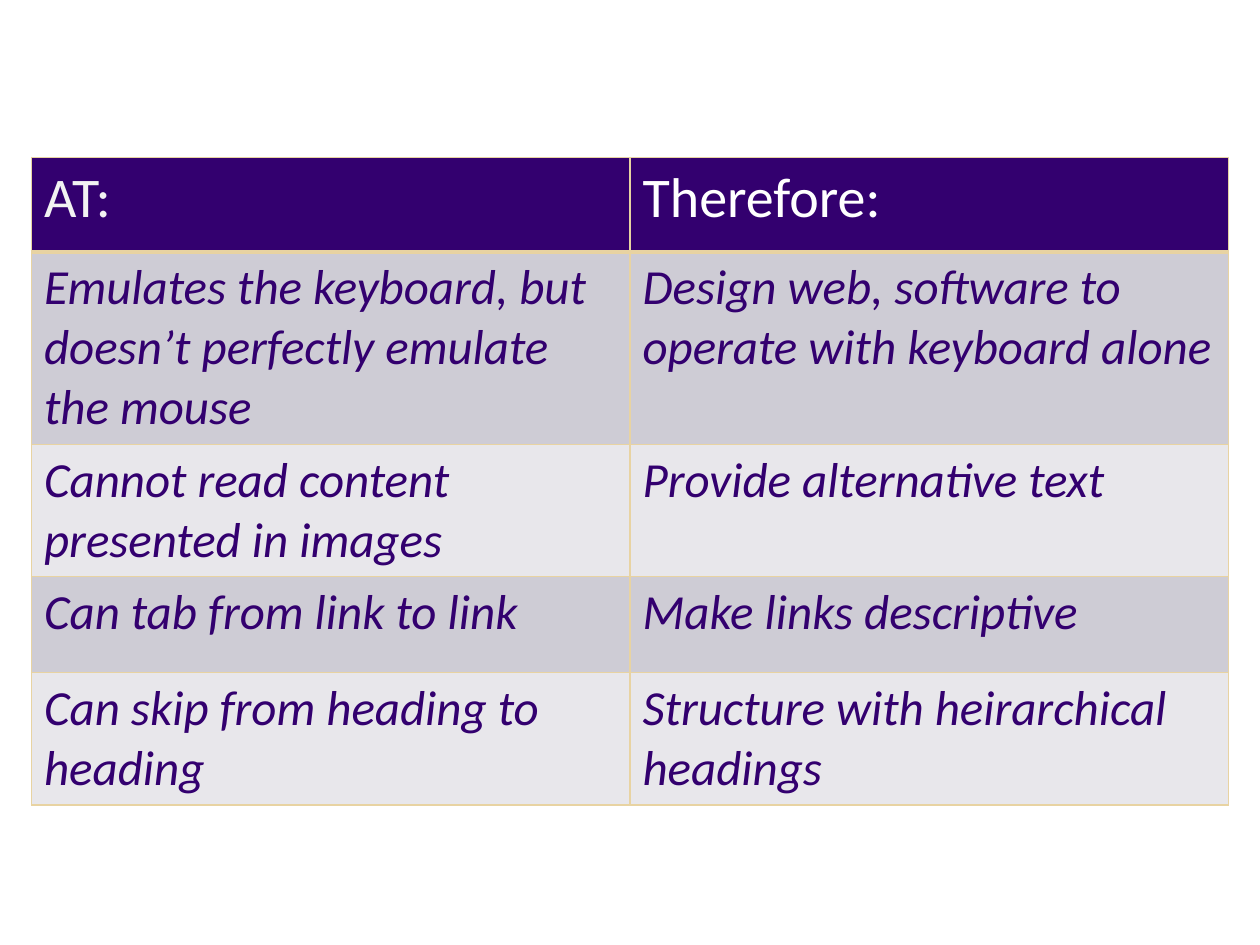
from lxml import etree
from pptx import Presentation
from pptx.dml.color import RGBColor
from pptx.oxml.ns import qn
from pptx.util import Inches, Pt

PURPLE = RGBColor(0x33, 0x00, 0x6F)
GOLD = RGBColor(0xE8, 0xD3, 0xA2)
BAND_DARK = RGBColor(0xCE, 0xCC, 0xD5)
BAND_LIGHT = RGBColor(0xE8, 0xE7, 0xEB)
OFF_WHITE = RGBColor(0xF2, 0xF2, 0xF2)
WHITE = RGBColor(0xFF, 0xFF, 0xFF)

GUIDELINES = [
    ("AT:", "Therefore:"),
    ("Emulates the keyboard, but doesn’t perfectly emulate the mouse",
     "Design web, software to operate with keyboard alone"),
    ("Cannot read content presented in images", "Provide alternative text"),
    ("Can tab from link to link", "Make links descriptive"),
    ("Can skip from heading to heading", "Structure with heirarchical headings"),
]


def add_borders(cell, bottom_width):
    properties = cell._tc.get_or_add_tcPr()
    widths = {"a:lnL": 1, "a:lnR": 1, "a:lnT": 1, "a:lnB": bottom_width}
    for position, (side, width) in enumerate(widths.items()):
        line = etree.Element(qn(side), w=str(Pt(width)))
        fill = etree.SubElement(line, qn("a:solidFill"))
        etree.SubElement(fill, qn("a:srgbClr"), val=str(GOLD))
        properties.insert(position, line)


deck = Presentation()
deck.slide_width = Inches(10)
deck.slide_height = Inches(7.5)
slide = deck.slides.add_slide(deck.slide_layouts[6])

margin = Inches(0.25)
grid_width = deck.slide_width - 2 * margin
grid_height = Inches(5.08)
guideline_frame = slide.shapes.add_table(
    len(GUIDELINES), 2, margin, deck.slide_height // 6, grid_width, grid_height)
guidelines = guideline_frame.table

for row_index, statements in enumerate(GUIDELINES):
    is_header = row_index == 0
    guidelines.rows[row_index].height = Inches(0.75 if is_header else 0.76)
    band = PURPLE if is_header else (BAND_LIGHT, BAND_DARK)[row_index % 2]
    for column_index, statement in enumerate(statements):
        cell = guidelines.cell(row_index, column_index)
        cell.fill.solid()
        cell.fill.fore_color.rgb = band
        add_borders(cell, 3 if is_header else 1)
        run = cell.text_frame.paragraphs[0].add_run()
        run.text = statement
        run.font.name = "Calibri"
        run.font.size = Pt(32 if is_header else 28)
        run.font.bold = False
        run.font.italic = not is_header
        run.font.color.rgb = (OFF_WHITE, WHITE)[column_index] if is_header else PURPLE

guideline_frame.height = grid_height
deck.save("out.pptx")
